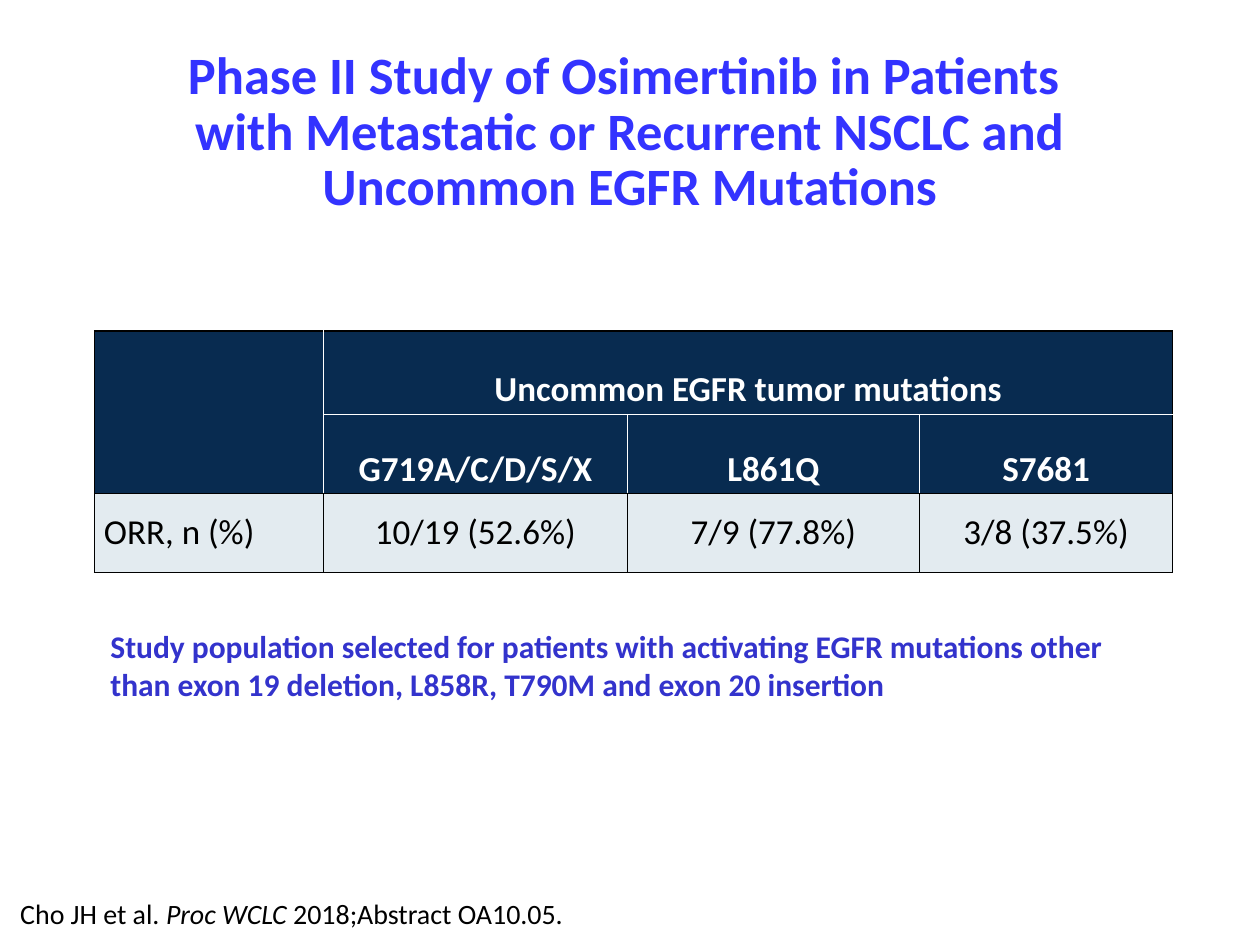
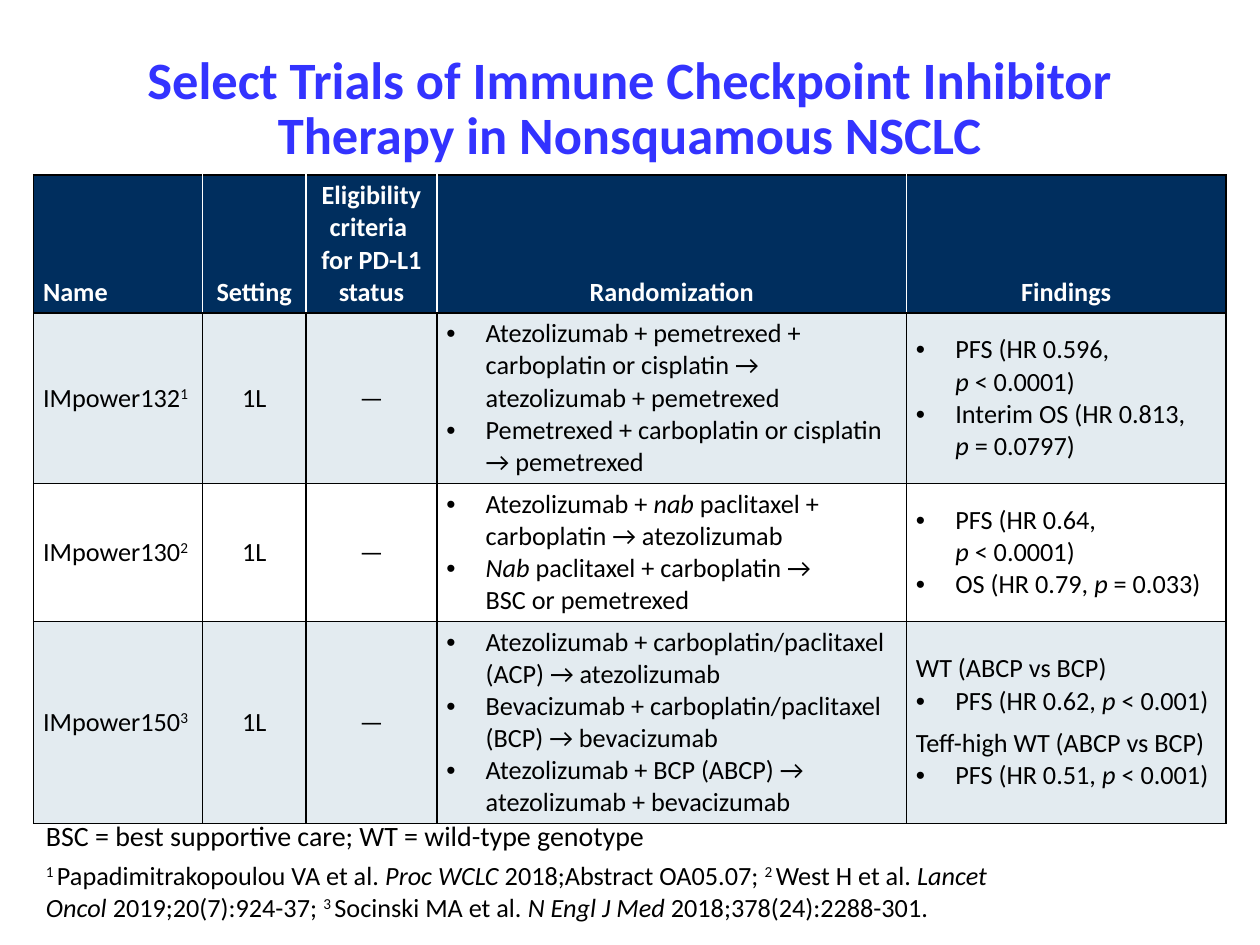
from copy import deepcopy

from lxml.etree import SubElement
from pptx import Presentation
from pptx.dml.color import RGBColor
from pptx.enum.text import MSO_ANCHOR, MSO_AUTO_SIZE, PP_ALIGN
from pptx.oxml.ns import qn
from pptx.util import Pt

FONT = "Calibri"
TITLE_BLUE, NOTE_BLUE = "3333FF", "3333CC"
BLACK, WHITE = "000000", "FFFFFF"
BANDS = ("E3EBF0", WHITE)
TITLE_ONLY = 5
BULLET = "• "
BULLET_INDENT = 22.5


def rgb(color):
    return RGBColor.from_string(color)


def add_runs(p, text, size, color, bold, italic, superscript):
    """Add text as formatted runs, with a line break at each newline."""
    for i, line in enumerate(text.split("\n")):
        if i:
            p.add_line_break()
            p._p[-1].append(deepcopy(p.runs[-1]._r.rPr))
        if not line:
            continue
        r = p.add_run()
        r.text = line
        f = r.font
        f.name, f.size, f.bold, f.italic = FONT, Pt(size), bold, italic
        f.color.rgb = rgb(color)
        if superscript:
            r._r.get_or_add_rPr().set("baseline", "30000")


def add_bullet(p):
    pPr = p._p.get_or_add_pPr()
    pPr.set("marL", str(Pt(BULLET_INDENT)))
    pPr.set("indent", str(-Pt(BULLET_INDENT)))
    SubElement(pPr, qn("a:buFont"), typeface="Arial")
    SubElement(pPr, qn("a:buChar"), char=BULLET.strip())


def write(tf, text, size=16, color=BLACK, bold=False, align=PP_ALIGN.LEFT,
          spacing=None):
    """Fill a frame with one string or a list of paragraphs.

    *stars* mark italics, ^carets^ superscripts, a leading bullet a list item.
    """
    paragraphs = [text] if isinstance(text, str) else text
    for i, content in enumerate(paragraphs):
        p = tf.add_paragraph() if i else tf.paragraphs[0]
        p.alignment = align
        if spacing:
            p.line_spacing = spacing
        if content.startswith(BULLET):
            add_bullet(p)
        elif i:
            p.space_before = Pt(6)
        for j, part in enumerate(content.removeprefix(BULLET).split("*")):
            for k, piece in enumerate(part.split("^")):
                add_runs(p, piece, size, color, bold, j % 2 == 1, k % 2 == 1)


def place(sp, x, y, w, h):
    sp.left, sp.top, sp.width, sp.height = Pt(x), Pt(y), Pt(w), Pt(h)


def add_titled_slide(prs, title, y):
    s = prs.slides.add_slide(prs.slide_layouts[TITLE_ONLY])
    place(s.shapes.title, 54, y, 612, 90)
    tf = s.shapes.title.text_frame
    tf.margin_left = tf.margin_right = tf.margin_top = tf.margin_bottom = 0
    tf.word_wrap, tf.auto_size = True, MSO_AUTO_SIZE.NONE
    tf.vertical_anchor = MSO_ANCHOR.MIDDLE
    write(tf, title, 30, TITLE_BLUE, True, PP_ALIGN.CENTER, 0.88)
    return s


def add_text(s, text, x, y, w, h, **fmt):
    tf = s.shapes.add_textbox(Pt(x), Pt(y), Pt(w), Pt(h)).text_frame
    tf.word_wrap, tf.auto_size = True, MSO_AUTO_SIZE.SHAPE_TO_FIT_TEXT
    write(tf, text, **fmt)


def set_borders(cell, borders):
    """Set (color, width) borders given in the order left, right, top, bottom."""
    tcPr = cell._tc.get_or_add_tcPr()
    for i, (side, (color, width)) in enumerate(zip("LRTB", borders)):
        ln = SubElement(tcPr, qn(f"a:ln{side}"), w=str(Pt(width)))
        fill = SubElement(ln, qn("a:solidFill"))
        SubElement(fill, qn("a:srgbClr"), val=color)
        tcPr.insert(i, ln)


def add_table(s, rows, x, y, widths, heights, size, header_fill,
              header_rows=1, header_line=1, spacing=None, merges=()):
    """Add a banded table whose header cells are divided by white lines."""
    frame = s.shapes.add_table(len(rows), len(widths), Pt(x), Pt(y),
                               Pt(sum(widths)), Pt(sum(heights)))
    table = frame.table
    table.first_row = table.horz_banding = False
    for col, w in zip(table.columns, widths):
        col.width = Pt(w)
    for row, h in zip(table.rows, heights):
        row.height = Pt(h)
    for start, end in merges:
        table.cell(*start).merge(table.cell(*end))

    for r, row in enumerate(rows):
        header = r < header_rows
        for c, text in enumerate(row):
            cell = table.cell(r, c)
            cell.margin_left = cell.margin_right = Pt(5.4)
            cell.margin_top = cell.margin_bottom = Pt(2.7)
            cell.vertical_anchor = MSO_ANCHOR.BOTTOM if header else MSO_ANCHOR.MIDDLE
            cell.fill.solid()
            band = BANDS[(r - header_rows) % 2]
            cell.fill.fore_color.rgb = rgb(header_fill if header else band)
            inner = (c > 0, c + cell.span_width < len(widths),
                     r > 0, r + cell.span_height < header_rows)
            set_borders(cell, [(WHITE, header_line) if header and is_inner
                               else (BLACK, 1) for is_inner in inner])
            left = c == 0 or isinstance(text, list)
            write(cell.text_frame, text, size, WHITE if header else BLACK, header,
                  PP_ALIGN.LEFT if left else PP_ALIGN.CENTER, spacing)


def osimertinib_slide(prs):
    s = add_titled_slide(
        prs, "Phase II Study of Osimertinib in Patients \nwith Metastatic or "
        "Recurrent NSCLC and Uncommon EGFR Mutations", 31.5)
    rows = [
        ["", "Uncommon EGFR tumor mutations", "", ""],
        ["", "G719A/C/D/S/X", "L861Q", "S7681"],
        ["ORR, n (%)", "10/19 (52.6%)", "7/9 (77.8%)", "3/8 (37.5%)"],
    ]
    add_table(s, rows, 54, 189, [131, 173.5, 167, 144.7], [47.8, 45.2, 45.2],
              20, "082B50", header_rows=2, header_line=0.75, spacing=0.9,
              merges=[((0, 0), (1, 0)), ((0, 1), (0, 3))])
    add_text(s, "Cho JH et al. *Proc WCLC *2018;Abstract OA10.05.",
             4.5, 508.5, 360, 26.6)
    add_text(s, "Study population selected for patients with activating EGFR "
             "mutations other than exon 19 deletion, L858R, T790M and exon 20 "
             "insertion", 56, 355, 616, 51, size=18, color=NOTE_BLUE, bold=True)


def checkpoint_slide(prs):
    s = add_titled_slide(
        prs, "Select Trials of Immune Checkpoint Inhibitor Therapy in "
        "Nonsquamous NSCLC", 18)
    rows = [
        ["Name", "Setting", "Eligibility criteria \nfor PD-L1 status",
         "Randomization", "Findings"],
        ["IMpower132^1^", "1L", "—",
         ["• Atezolizumab + pemetrexed + carboplatin or cisplatin → "
          "atezolizumab + pemetrexed",
          "• Pemetrexed + carboplatin or cisplatin → pemetrexed"],
         ["• PFS (HR 0.596, \n*p* < 0.0001)",
          "• Interim OS (HR 0.813, \n*p *= 0.0797)"]],
        ["IMpower130^2^", "1L", "—",
         ["• Atezolizumab + *nab *paclitaxel + carboplatin → atezolizumab",
          "• *Nab *paclitaxel + carboplatin → \nBSC or pemetrexed"],
         ["• PFS (HR 0.64, \n*p* < 0.0001)",
          "• OS (HR 0.79, *p* = 0.033)"]],
        ["IMpower150^3^", "1L", "—",
         ["• Atezolizumab + carboplatin/paclitaxel (ACP) → atezolizumab",
          "• Bevacizumab + carboplatin/paclitaxel (BCP) → bevacizumab",
          "• Atezolizumab + BCP (ABCP) → atezolizumab + bevacizumab"],
         ["WT (ABCP vs BCP)", "• PFS (HR 0.62, *p* < 0.001)",
          "Teff-high WT (ABCP vs BCP)", "• PFS (HR 0.51, *p* < 0.001)"]],
    ]
    add_table(s, rows, 19.2, 100, [96.5, 59.2, 74.8, 268.4, 182.6],
              [70.6, 87, 70.6, 103.7], 15, "002E5E")
    add_text(s, "BSC = best supportive care; WT = wild-type genotype",
             19.2, 464, 505, 26.6)
    add_text(s, "^1 ^Papadimitrakopoulou VA et al. *Proc WCLC* 2018;Abstract "
             "OA05.07; ^2 ^West H et al. *Lancet Oncol *2019;20(7):924-37; "
             "^3 ^Socinski MA et al. *N Engl J Med* 2018;378(24):2288-301.",
             19.2, 487.5, 579, 44, size=15)


def main():
    prs = Presentation()
    prs.slide_width, prs.slide_height = Pt(720), Pt(540)
    osimertinib_slide(prs)
    checkpoint_slide(prs)
    prs.save("out.pptx")


if __name__ == "__main__":
    main()
